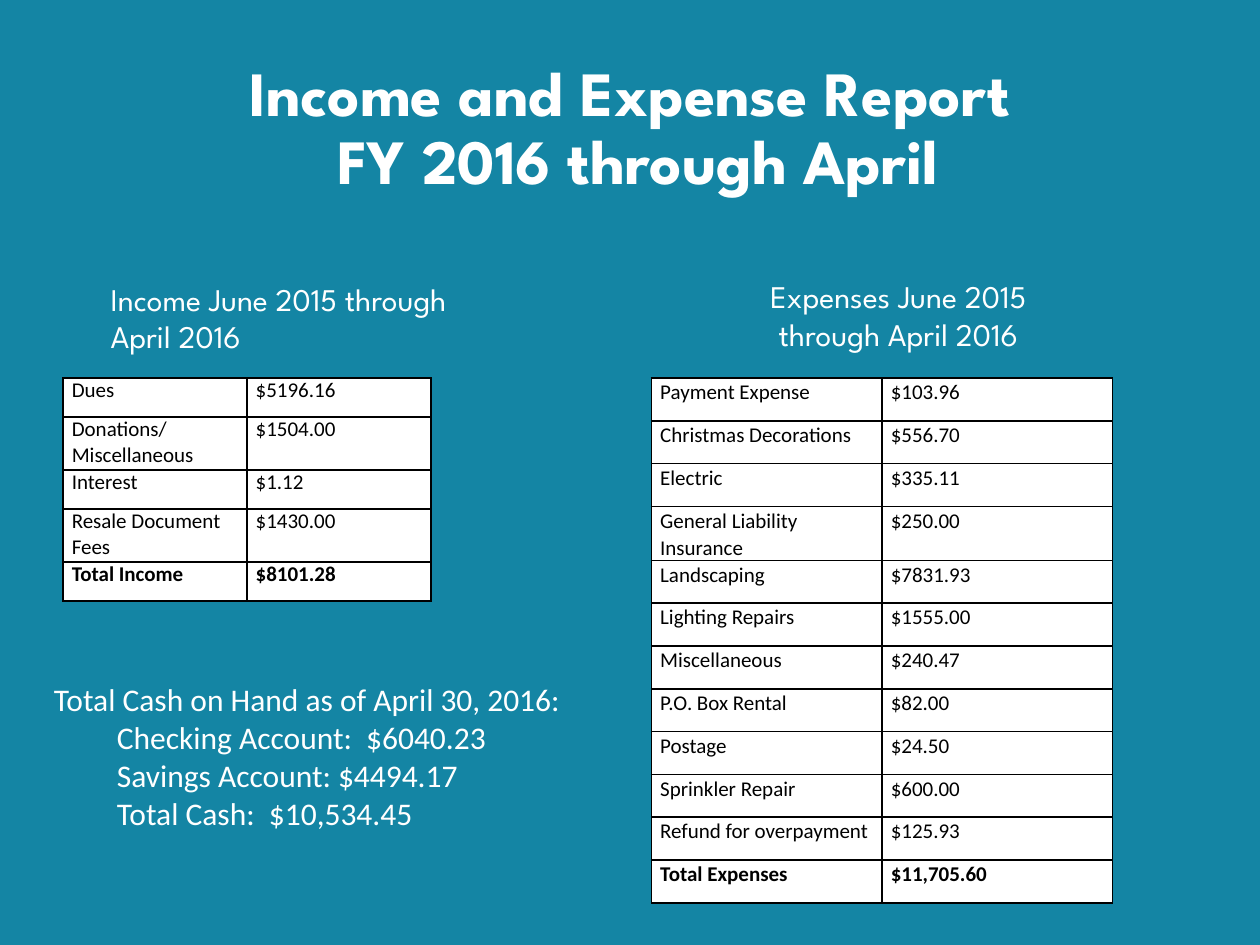
from dataclasses import dataclass

from lxml.etree import SubElement
from pptx import Presentation
from pptx.dml.color import RGBColor
from pptx.enum.text import MSO_ANCHOR, PP_ALIGN
from pptx.oxml.ns import qn
from pptx.util import Inches, Pt

COLORS = {"background": "1485A4", "light": "FFFFFF", "dark": "000000"}
HEADING_FONT = "League Spartan"
BODY_FONT = "Calibri"


@dataclass
class Ledger:
    left: float
    top: float
    column_width: float
    row_heights: list[float]
    entries: list[tuple[str, str]]
    line_spacing: float = 1.0


@dataclass
class Caption:
    left: float
    top: float
    width: float
    height: float
    paragraphs: list[str]
    font: str = HEADING_FONT
    size: float = 18
    bold: bool = False
    align: PP_ALIGN = PP_ALIGN.LEFT
    spacing: float = 1.0
    anchor: MSO_ANCHOR = MSO_ANCHOR.TOP
    bottom_inset: float = 0.05
    detail_indent: float = 0


INCOME = Ledger(0.5, 3, 1.46, [0.31, 0.42, 0.31, 0.42, 0.31], [
    ("Dues", "$5196.16"),
    ("Donations/\nMiscellaneous", "$1504.00"),
    ("Interest", "$1.12"),
    ("Resale Document Fees", "$1430.00"),
    ("Total Income", "$8101.28"),
])
EXPENSES = Ledger(5.17, 3, 1.83, [0.34] * 12, [
    ("Payment Expense", "$103.96"),
    ("Christmas Decorations", "$556.70"),
    ("Electric", "$335.11"),
    ("General Liability Insurance", "$250.00"),
    ("Landscaping", "$7831.93"),
    ("Lighting Repairs", "$1555.00"),
    ("Miscellaneous", "$240.47"),
    ("P.O. Box Rental", "$82.00"),
    ("Postage", "$24.50"),
    ("Sprinkler Repair", "$600.00"),
    ("Refund for overpayment", "$125.93"),
    ("Total Expenses", "$11,705.60"),
], line_spacing=1.07)

CAPTIONS = [
    Caption(0.8, 0.92, 8.53, 0.83,
            ["Income and Expense Report \nFY 2016 through April"],
            size=36, bold=True, align=PP_ALIGN.CENTER, spacing=0.9,
            anchor=MSO_ANCHOR.MIDDLE, bottom_inset=0.66),
    Caption(0.78, 2.17, 2.92, 1.01, ["Income June 2015 through April 2016"]),
    Caption(5.67, 2.15, 2.92, 1.01, ["Expenses June 2015 through April 2016"],
            align=PP_ALIGN.CENTER),
    Caption(0.33, 5.35, 5, 1.31, [
        "Total Cash on Hand as of April 30, 2016:",
        "Checking Account:  $6040.23",
        "Savings Account: $4494.17",
        "Total Cash:  $10,534.45",
    ], font=BODY_FONT, detail_indent=0.5),
]


def rgb(name: str) -> RGBColor:
    return RGBColor.from_string(COLORS[name])


def write_text(paragraph, text: str, *, font: str, size: float, color: str,
               bold: bool = False, align: PP_ALIGN = PP_ALIGN.LEFT,
               spacing: float = 1.0, indent: float = 0) -> None:
    paragraph.text = text
    paragraph.alignment = align
    paragraph.line_spacing = spacing
    if indent:
        paragraph._p.get_or_add_pPr().set("marL", str(Inches(indent)))
    for run in paragraph.runs:
        run.font.name = font
        run.font.size = Pt(size)
        run.font.bold = bold
        run.font.color.rgb = rgb(color)


def draw_caption(slide, caption: Caption) -> None:
    frame = slide.shapes.add_textbox(
        Inches(caption.left), Inches(caption.top),
        Inches(caption.width), Inches(caption.height)).text_frame
    frame.word_wrap = True
    frame.vertical_anchor = caption.anchor
    frame.margin_bottom = Inches(caption.bottom_inset)
    for index, text in enumerate(caption.paragraphs):
        paragraph = frame.add_paragraph() if index else frame.paragraphs[0]
        write_text(paragraph, text, font=caption.font, size=caption.size,
                   color="light", bold=caption.bold, align=caption.align,
                   spacing=caption.spacing,
                   indent=caption.detail_indent if index else 0)


def add_borders(cell) -> None:
    properties = cell._tc.get_or_add_tcPr()
    for side in ("a:lnL", "a:lnR", "a:lnT", "a:lnB"):
        line = SubElement(properties, qn(side), w=str(Pt(1)))
        fill = SubElement(line, qn("a:solidFill"))
        SubElement(fill, qn("a:srgbClr"), val=COLORS["dark"])


def draw_ledger(slide, ledger: Ledger) -> None:
    table = slide.shapes.add_table(
        len(ledger.entries), 2, Inches(ledger.left), Inches(ledger.top),
        Inches(2 * ledger.column_width), Inches(sum(ledger.row_heights))).table
    table.first_row = False
    table.horz_banding = False
    for column in table.columns:
        column.width = Inches(ledger.column_width)
    for row, height, entry in zip(table.rows, ledger.row_heights, ledger.entries):
        row.height = Inches(height)
        for cell, value in zip(row.cells, entry):
            add_borders(cell)
            cell.fill.solid()
            cell.fill.fore_color.rgb = rgb("light")
            cell.margin_left = cell.margin_right = Inches(0.07)
            cell.margin_top = cell.margin_bottom = Inches(0)
            cell.text_frame.text = value
            for paragraph in cell.text_frame.paragraphs:
                write_text(paragraph, paragraph.text, font=BODY_FONT, size=12,
                           color="dark", bold=entry is ledger.entries[-1],
                           spacing=ledger.line_spacing)


def main() -> None:
    presentation = Presentation()
    presentation.slide_width = Inches(10)
    presentation.slide_height = Inches(7.5)
    slide = presentation.slides.add_slide(presentation.slide_layouts[6])
    slide.background.fill.solid()
    slide.background.fill.fore_color.rgb = rgb("background")
    for caption in CAPTIONS:
        draw_caption(slide, caption)
    for ledger in (INCOME, EXPENSES):
        draw_ledger(slide, ledger)
    presentation.save("out.pptx")


if __name__ == "__main__":
    main()
